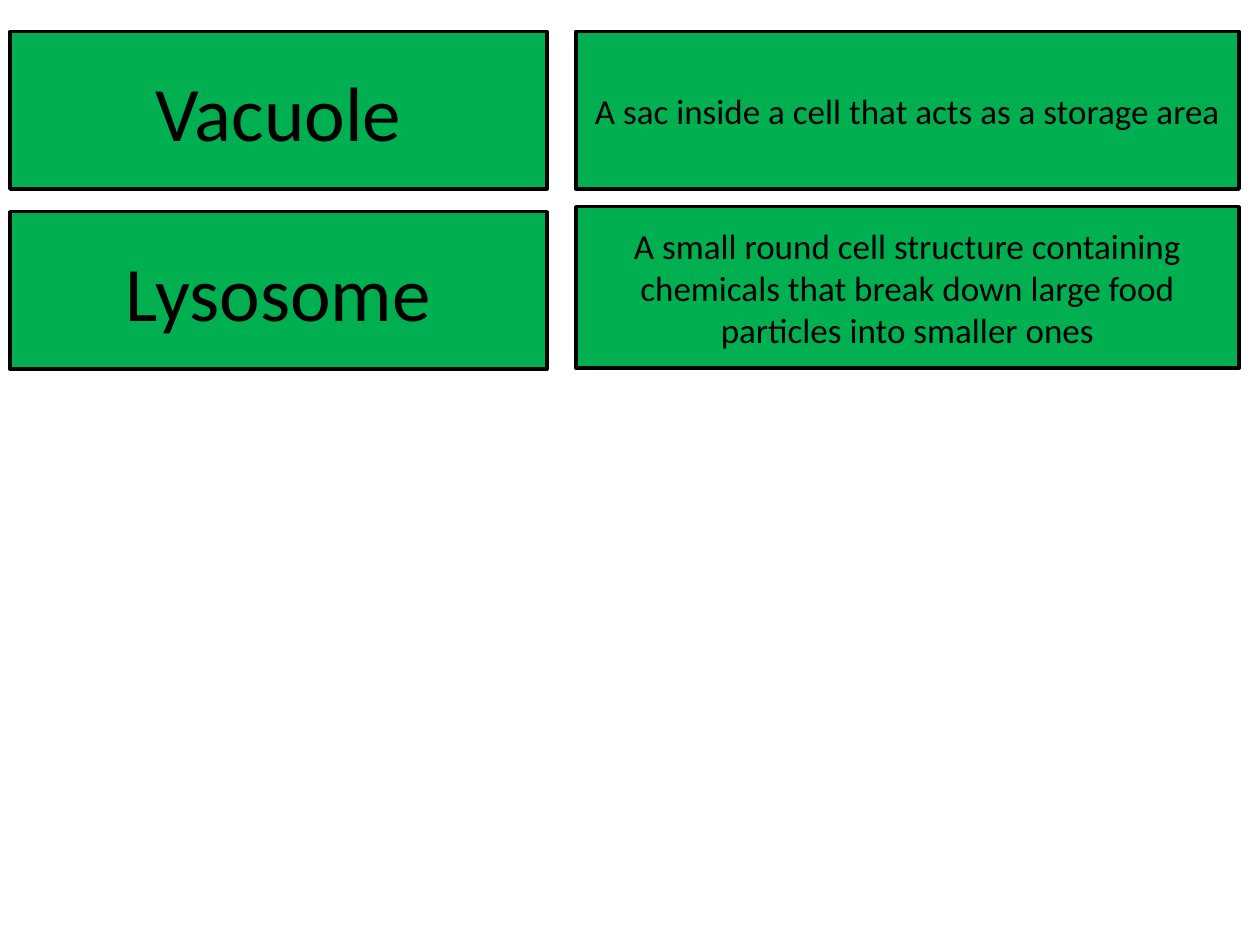
from dataclasses import dataclass

from pptx import Presentation
from pptx.dml.color import RGBColor
from pptx.enum import shapes, text
from pptx.slide import Slide
from pptx.util import Pt

GREEN = RGBColor(0x00, 0xB0, 0x50)
BLACK = RGBColor(0x00, 0x00, 0x00)
FONT = "Calibri"
TERM_SIZE = 44
DEFINITION_SIZE = 20
TERM_LEFT, TERM_WIDTH = 5.76, 306.72
DEFINITION_LEFT, DEFINITION_WIDTH = 329.04, 379
CARD_HEIGHT = 90


@dataclass(frozen=True)
class Entry:
    term: str
    definition: str
    term_top: float
    definition_top: float
    definition_height: float = CARD_HEIGHT


ENTRIES = [
    Entry("Vacuole", "A sac inside a cell that acts as a storage area", 18, 18),
    Entry(
        "Lysosome",
        "A small round cell structure containing chemicals that break down "
        "large food particles into smaller ones",
        120.96,
        118.08,
        92.16,
    ),
]


def add_card(page: Slide, wording: str, size: float, left: float, top: float,
             width: float, height: float) -> None:
    box = page.shapes.add_shape(
        shapes.MSO_SHAPE.FLOWCHART_PROCESS, Pt(left), Pt(top), Pt(width), Pt(height)
    )
    box.shadow.inherit = False
    box.fill.solid()
    box.fill.fore_color.rgb = GREEN
    box.line.color.rgb = BLACK
    box.line.width = Pt(2)
    frame = box.text_frame
    frame.word_wrap = True
    frame.vertical_anchor = text.MSO_ANCHOR.MIDDLE
    para = frame.paragraphs[0]
    para.alignment = text.PP_ALIGN.CENTER
    span = para.add_run()
    span.text = wording
    span.font.name = FONT
    span.font.size = Pt(size)
    span.font.color.rgb = BLACK


def add_entry(page: Slide, entry: Entry) -> None:
    add_card(page, entry.term, TERM_SIZE, TERM_LEFT, entry.term_top,
             TERM_WIDTH, CARD_HEIGHT)
    add_card(page, entry.definition, DEFINITION_SIZE, DEFINITION_LEFT,
             entry.definition_top, DEFINITION_WIDTH, entry.definition_height)


def main() -> None:
    deck = Presentation()
    deck.slide_width = Pt(720)
    deck.slide_height = Pt(540)
    page = deck.slides.add_slide(deck.slide_layouts.get_by_name("Blank"))
    for entry in ENTRIES:
        add_entry(page, entry)
    deck.save("out.pptx")


if __name__ == "__main__":
    main()
